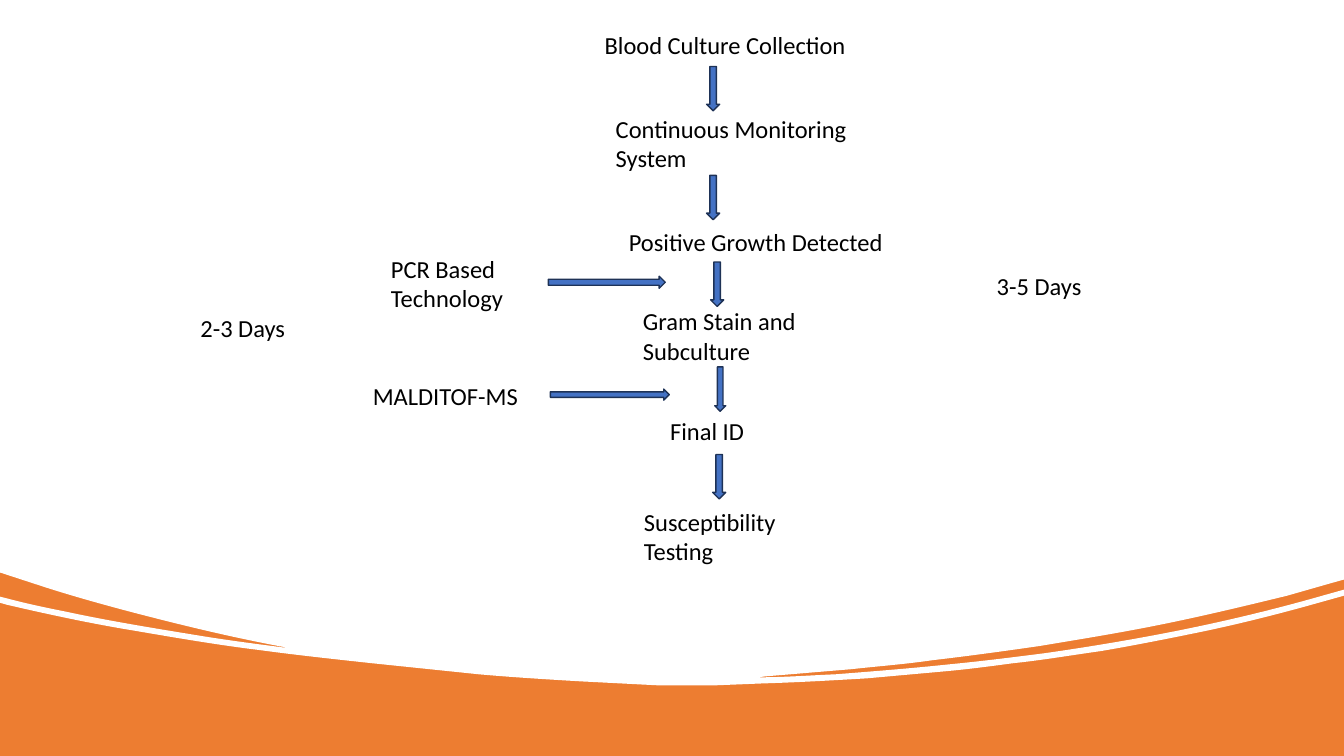
"""Build the blood culture workflow slide with its curved orange footer."""
from dataclasses import dataclass

from lxml import etree
from pptx import Presentation
from pptx.dml.color import RGBColor
from pptx.enum.shapes import MSO_SHAPE
from pptx.enum.text import MSO_AUTO_SIZE
from pptx.oxml.ns import qn
from pptx.shapes.autoshape import Shape
from pptx.slide import Slide
from pptx.util import Inches, Pt

RECTANGLE = MSO_SHAPE.RECTANGLE
DOWN_ARROW = MSO_SHAPE.DOWN_ARROW
RIGHT_ARROW = MSO_SHAPE.RIGHT_ARROW
FIT_TEXT = MSO_AUTO_SIZE.SHAPE_TO_FIT_TEXT

COLORS = {
    "footer": "ED7D31",
    "paper": "FFFFFF",
    "text": "000000",
    "arrow": "4472C4",
    "arrow_line": "1E3256",
}
CELL = Inches(0.1)
COLUMNS, ROWS = 133.33, 75
LINE_ROWS, PADDING_ROWS = 2.95, 1
DOWN_ROWS = 4.4

Point = tuple[float, float]
Segment = tuple[Point, ...]


@dataclass(frozen=True)
class Label:
    text: str
    column: float
    row: float
    columns: float
    lines: int = 1


@dataclass(frozen=True)
class Arrow:
    kind: MSO_SHAPE
    column: float
    row: float
    columns: float
    rows: float = DOWN_ROWS


LABELS = [
    Label("Blood Culture Collection", 59, 2.5, 26.3),
    Label("Continuous Monitoring System", 60.1, 10.8, 25.1, 2),
    Label("Positive Growth Detected", 61.4, 22, 27.6),
    Label("Gram Stain and Subculture", 62.8, 29.9, 18.6, 2),
    Label("Final ID", 65.5, 40.8, 15.4),
    Label("Susceptibility Testing", 62.9, 49.8, 16.6, 2),
    Label("3-5 Days", 97.9, 26.4, 15.6),
    Label("PCR Based Technology", 37.8, 24.7, 14.7, 2),
    Label("MALDITOF-MS", 36, 37.3, 17),
    Label("2-3 Days", 18.9, 30.6, 10.6),
]
ARROWS = [
    Arrow(DOWN_ARROW, 70.1, 6.6, 1.3),
    Arrow(DOWN_ARROW, 70.1, 17.4, 1.3),
    Arrow(DOWN_ARROW, 70.5, 26, 1.3),
    Arrow(DOWN_ARROW, 70.9, 36.4, 1.1),
    Arrow(DOWN_ARROW, 70.7, 45.1, 1.3),
    Arrow(RIGHT_ARROW, 54.4, 27.4, 11.6, 1.2),
    Arrow(RIGHT_ARROW, 54.6, 38.6, 11.8, 1.1),
]
PAPER_START: Point = (0, 0)
PAPER_OUTLINE: list[Segment] = [
    ((COLUMNS, 0),), ((COLUMNS, 57.5),), ((131.9, 57.9),),
    ((130.5, 58.3), (129.1, 58.7), (127.7, 59.1)),
    ((123.2, 60.2), (118.6, 61.3), (114, 62.2)),
    ((110.4, 62.9), (106.7, 63.5), (103.1, 64.1)),
    ((99.6, 64.6), (96, 65.1), (92.5, 65.5)),
    ((89.8, 65.9), (87.1, 66.1), (84.4, 66.4)),
    ((76, 67.1),), ((74.3, 67.3),), ((75.3, 67.2),),
    ((77.8, 67.2), (80.4, 67), (82.9, 66.9)),
    ((86.7, 66.6), (90.5, 66.3), (94.3, 65.9)),
    ((97.4, 65.6), (100.6, 65.2), (103.7, 64.8)),
    ((107.9, 64.2), (112.1, 63.5), (116.2, 62.7)),
    ((121.3, 61.7), (126.3, 60.5), (131.2, 59.1)),
    ((COLUMNS, 58.5),), ((COLUMNS, 59.1),), ((129.4, 60.2),),
    ((126.1, 61.1), (122.9, 61.9), (119.6, 62.6)),
    ((116.2, 63.3), (112.7, 64), (109.2, 64.6)),
    ((106.3, 65), (103.4, 65.5), (100.5, 65.8)),
    ((98.3, 66.1), (96, 66.4), (93.8, 66.6)),
    ((86, 67.3),),
    ((82.6, 67.5), (79.2, 67.7), (75.8, 67.8)),
    ((70.8, 68),), ((65.4, 68),), ((57.6, 67.6),),
    ((54.2, 67.4), (50.9, 67.2), (47.5, 66.9)),
    ((36.9, 65.8),),
    ((33.2, 65.4), (29.5, 65), (25.8, 64.5)),
    ((21.7, 64), (17.6, 63.3), (13.5, 62.6)),
    ((9.2, 61.9), (5, 61), (0.7, 60)),
    ((0, 59.8),), ((0, 59.2),), ((0.8, 59.4),),
    ((2.7, 59.9), (4.6, 60.3), (6.6, 60.7)),
    ((10.8, 61.6), (15.1, 62.3), (19.4, 63)),
    ((22.4, 63.5), (25.5, 63.9), (28.6, 64.3)),
    ((28.2, 64.2),),
    ((22.8, 63.2), (17.5, 61.9), (12.2, 60.5)),
    ((9.6, 59.8), (7.1, 59.1), (4.6, 58.3)),
    ((0, 56.8),),
]


def cells(*counts: float) -> list[int]:
    """Convert grid counts to slide lengths."""
    return [round(count * CELL) for count in counts]


def paint(shape: Shape, fill: str, line: str | None = None) -> None:
    """Set the fill and outline of a shape."""
    shape.shadow.inherit = False
    shape.fill.solid()
    shape.fill.fore_color.rgb = RGBColor.from_string(COLORS[fill])
    if line is None:
        shape.line.fill.background()
    else:
        shape.line.color.rgb = RGBColor.from_string(COLORS[line])
        shape.line.width = Pt(1)


def write(shape: Shape, text: str, *, size: float = 17.5, font: str = "Calibri",
          color: str = "text", space_after: float = 6) -> None:
    """Write wrapped text into a shape."""
    frame = shape.text_frame
    frame.word_wrap = True
    frame.auto_size = FIT_TEXT
    paragraph = frame.paragraphs[0]
    paragraph.space_after = Pt(space_after)
    run = paragraph.add_run()
    run.text = text
    run.font.size = Pt(size)
    run.font.name = font
    run.font.color.rgb = RGBColor.from_string(COLORS[color])


def add_curved_shape(slide: Slide, start: Point, outline: list[Segment]) -> Shape:
    """Add a closed outline whose three-point segments are Bézier curves."""
    builder = slide.shapes.build_freeform(*cells(*start), scale=1.0)
    points = [tuple(cells(*point)) for segment in outline for point in segment]
    builder.add_line_segments(points, close=True)
    shape = builder.convert_to_shape()
    lines = iter(list(shape.element.iter(qn("a:lnTo"))))
    for segment in outline:
        parts = [next(lines) for _ in segment]
        if len(parts) == 3:
            curve = etree.Element(qn("a:cubicBezTo"))
            parts[0].addprevious(curve)
            for part in parts:
                curve.append(part[0])
                part.getparent().remove(part)
    return shape


def draw_background(slide: Slide) -> None:
    """Draw the orange ground and the curved white paper over it."""
    ground = slide.shapes.add_shape(RECTANGLE, *cells(0, 0, COLUMNS, ROWS))
    paint(ground, "footer")
    paint(add_curved_shape(slide, PAPER_START, PAPER_OUTLINE), "paper")


def draw_label(slide: Slide, label: Label) -> None:
    """Draw one step or note."""
    rows = PADDING_ROWS + label.lines * LINE_ROWS
    box = slide.shapes.add_textbox(*cells(label.column, label.row, label.columns, rows))
    write(box, label.text)


def draw_arrow(slide: Slide, arrow: Arrow) -> None:
    """Draw one block arrow."""
    bounds = cells(arrow.column, arrow.row, arrow.columns, arrow.rows)
    paint(slide.shapes.add_shape(arrow.kind, *bounds), "arrow", "arrow_line")


def main() -> None:
    """Build and save the presentation."""
    presentation = Presentation()
    presentation.slide_width, presentation.slide_height = cells(COLUMNS, ROWS)
    slide = presentation.slides.add_slide(presentation.slide_layouts[6])
    draw_background(slide)
    for label in LABELS:
        draw_label(slide, label)
    for arrow in ARROWS:
        draw_arrow(slide, arrow)
    presentation.save("out.pptx")


if __name__ == "__main__":
    main()
